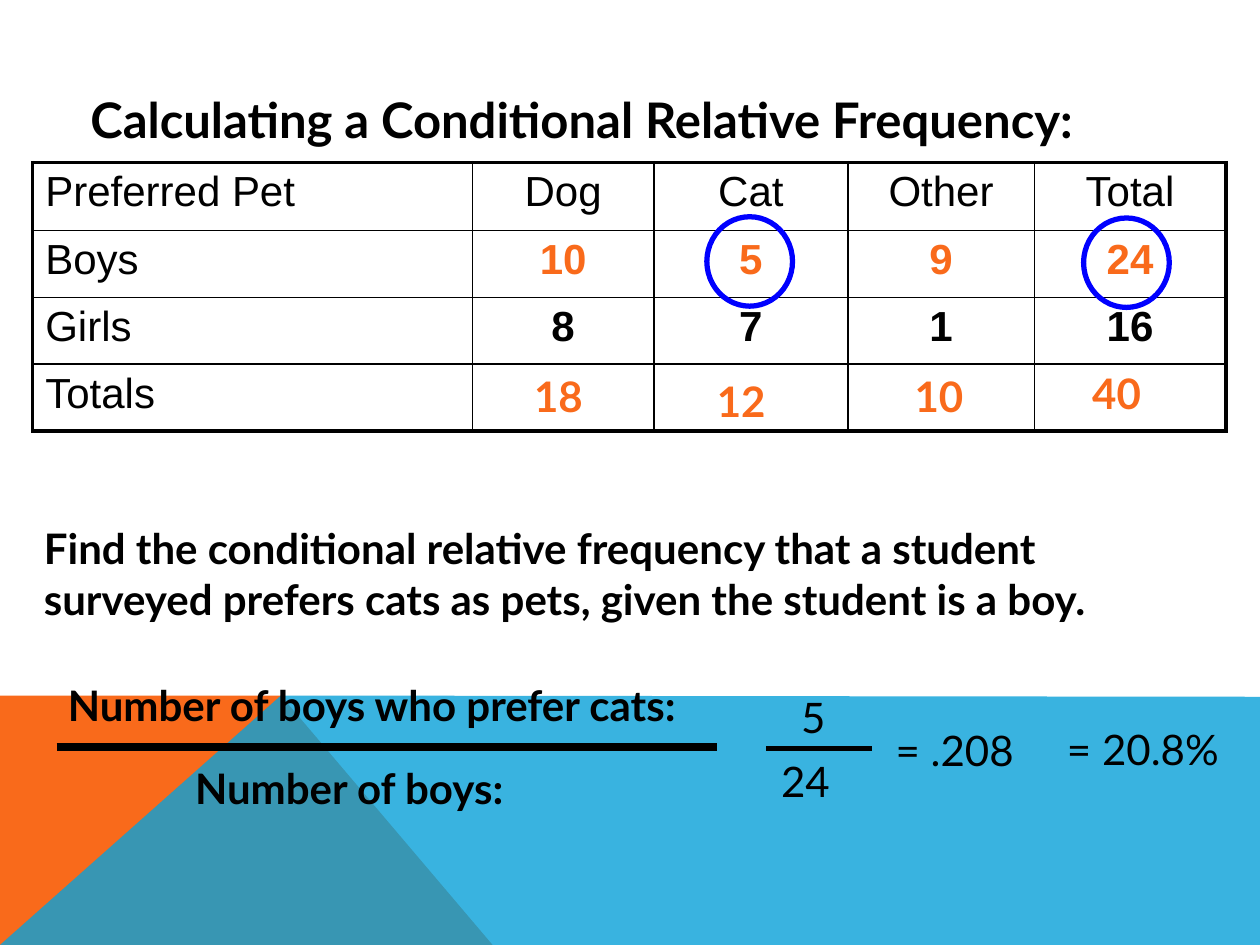
"""Build a slide on calculating a conditional relative frequency."""
from dataclasses import dataclass

from lxml.etree import SubElement
from pptx import Presentation
from pptx.dml.color import RGBColor
from pptx.enum.shapes import MSO_CONNECTOR, MSO_SHAPE
from pptx.enum.text import PP_ALIGN
from pptx.oxml.ns import qn
from pptx.util import Inches, Pt


@dataclass(frozen=True)
class Theme:
    """Colours, fonts and sizes of the slide."""
    ink: str = "000000"
    orange: str = "F96A1B"
    blue: str = "08A1D9"
    ring: str = "0000FF"
    text_font: str = "Lato"
    table_font: str = "Arial"
    title_size: int = 28
    body_size: int = 24
    frame: float = 2.25
    rule: float = 1
    stroke: float = 3
    heavy: float = 4.5


class Board:
    """Draws elements on a slide laid out in 100 columns and 75 rows."""

    def __init__(self, prs, theme):
        """Add a blank slide and derive the grid from its size."""
        self.s = prs.slides.add_slide(prs.slide_layouts[6])
        self.theme = theme
        self.col = prs.slide_width / 100
        self.row = prs.slide_height / 75

    def x(self, cols):
        """Turn columns into a length."""
        return round(cols * self.col)

    def y(self, rows):
        """Turn rows into a length."""
        return round(rows * self.row)

    def box(self, left, top, width, height):
        """Turn a grid box into lengths."""
        return self.x(left), self.y(top), self.x(width), self.y(height)

    def style(self, p, font, size, color, bold):
        """Format every run of a paragraph."""
        for r in p.runs:
            r.font.name, r.font.size, r.font.bold = font, Pt(size), bold
            r.font.color.rgb = RGBColor.from_string(color)

    def text(self, text, box, color=None, bold=False, size=None):
        """Add a wrapped text box."""
        tf = self.s.shapes.add_textbox(*self.box(*box)).text_frame
        tf.word_wrap = True
        tf.text = text
        self.style(tf.paragraphs[0], self.theme.text_font,
                   size or self.theme.body_size, color or self.theme.ink, bold)

    def polygon(self, points, color, alpha=100):
        """Add a filled outline, optionally translucent."""
        (left, top), *rest = [(self.x(a), self.y(b)) for a, b in points]
        builder = self.s.shapes.build_freeform(left, top)
        builder.add_line_segments(rest, close=True)
        sp = builder.convert_to_shape()
        sp.shadow.inherit = False
        sp.line.fill.background()
        sp.fill.solid()
        sp.fill.fore_color.rgb = RGBColor.from_string(color)
        if alpha < 100:
            clr = sp.fill._xPr.find(".//" + qn("a:srgbClr"))
            SubElement(clr, qn("a:alpha"), val=str(alpha * 1000))

    def bar(self, left, right, row, width):
        """Add a horizontal fraction bar."""
        sp = self.s.shapes.add_connector(
            MSO_CONNECTOR.STRAIGHT, self.x(left), self.y(row), self.x(right), self.y(row))
        sp.line.width = Pt(width)
        sp.line.color.rgb = RGBColor.from_string(self.theme.ink)
        SubElement(sp._element.spPr, qn("a:effectLst"))

    def ring(self, box):
        """Add a hollow ellipse that marks a value."""
        sp = self.s.shapes.add_shape(MSO_SHAPE.OVAL, *self.box(*box))
        sp.shadow.inherit = False
        sp.fill.background()
        sp.line.width = Pt(self.theme.stroke)
        sp.line.color.rgb = RGBColor.from_string(self.theme.ring)

    def border(self, cell, side, width):
        """Draw one side of a table cell."""
        ln = SubElement(cell._tc.get_or_add_tcPr(), qn(f"a:ln{side}"), w=str(Pt(width)))
        fill = SubElement(ln, qn("a:solidFill"))
        SubElement(fill, qn("a:srgbClr"), val=self.theme.ink)

    def table(self, rows, left, top, widths, heights, highlight):
        """Add a framed table with bold figures and one highlighted row."""
        t = self.theme
        box = self.box(left, top, sum(widths), sum(heights))
        table = self.s.shapes.add_table(len(rows), len(widths), *box).table
        table.first_row = table.horz_banding = False
        for column, width in zip(table.columns, widths):
            column.width = self.x(width)
        for line, height in zip(table.rows, heights):
            line.height = self.y(height)
        for i, values in enumerate(rows):
            for j, value in enumerate(values):
                cell = table.cell(i, j)
                outer = {"L": j == 0, "R": j == len(widths) - 1,
                         "T": i == 0, "B": i == len(rows) - 1}
                for side, framed in outer.items():
                    self.border(cell, side, t.frame if framed else t.rule)
                cell.fill.background()
                cell.text_frame.text = value
                p = cell.text_frame.paragraphs[0]
                p.alignment = PP_ALIGN.CENTER if j else PP_ALIGN.LEFT
                figure = value.isdigit()
                color = t.orange if figure and i == highlight else t.ink
                self.style(p, t.table_font, t.body_size, color, figure)


def main():
    """Compose and save the slide."""
    prs = Presentation()
    prs.slide_width, prs.slide_height = Inches(10), Inches(7.5)
    theme = Theme()
    board = Board(prs, theme)

    board.polygon([(0, 75), (0, 55.2), (22.3, 55.2), (39.1, 75)], theme.orange)
    board.polygon([(0, 75), (22.3, 55.2), (100, 55.3), (100, 75)], theme.blue, 80)

    board.text("Calculating a Conditional Relative Frequency:",
               (6.2, 6.6, 90.6, 5.7), bold=True, size=theme.title_size)
    for text, box in [
        ("Find the conditional relative frequency that a student surveyed "
         "prefers cats as pets, given the student is a boy.", (2.5, 41, 92.6, 9)),
        ("Number of boys who prefer cats:", (4.4, 53.4, 55.2, 5)),
        ("Number of boys:", (14.5, 60, 29.4, 5)),
    ]:
        board.text(text, box, bold=True)

    board.bar(4.5, 56.9, 59.3, theme.heavy)
    board.bar(60.8, 69.2, 59.4, theme.stroke)
    for text, left, top, width in [("5", 62.6, 54.4, 4.4), ("24", 61, 59.5, 8.2),
                                   ("= .208", 70.1, 57, 14), ("= 20.8%", 83.7, 56.9, 16.3)]:
        board.text(text, (left, top, width, 5))

    board.table([["Preferred Pet", "Dog", "Cat", "Other", "Total"],
                 ["Boys", "10", "5", "9", "24"],
                 ["Girls", "8", "7", "1", "16"],
                 ["Totals", "", "", "", ""]],
                2.6, 12.9, [34.9, 14.4, 15.4, 14.8, 15.2], [5.4, 5.3, 5.3, 5.3], highlight=1)
    for total, left, top in [("18", 41.4, 28.9), ("12", 55.9, 29.3),
                             ("10", 71.6, 28.9), ("40", 85.7, 28.7)]:
        board.text(total, (left, top, 7.8, 5), theme.orange, bold=True)

    for left, top in [(86, 17.3), (56.1, 17.2)]:
        board.ring((left, top, 6.8, 7.1))

    prs.save("out.pptx")


if __name__ == "__main__":
    main()
